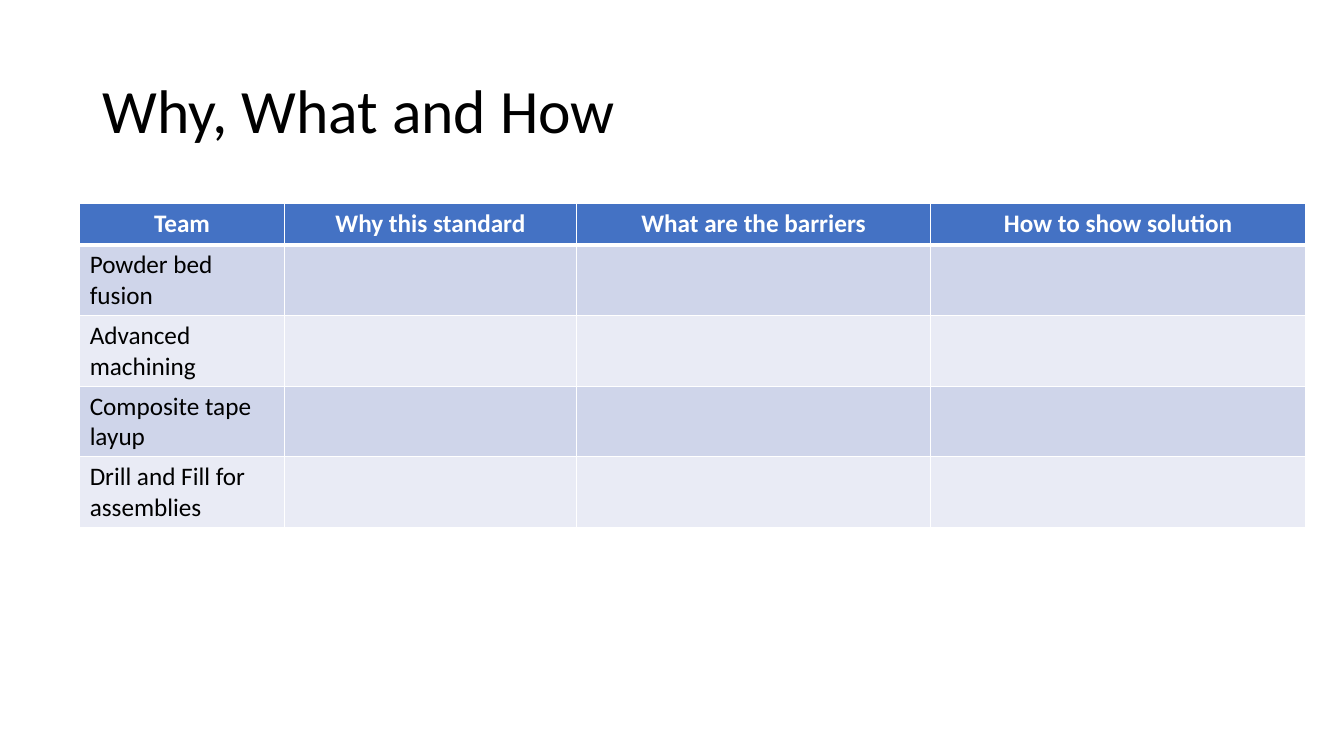
"""Build the Why, What and How slide with its team table."""
from lxml.etree import SubElement as Sub
from pptx import Presentation as Deck
from pptx.dml.color import RGBColor as Rgb
from pptx.enum.text import MSO_ANCHOR as Anchor, PP_ALIGN as Align
from pptx.oxml.ns import qn
from pptx.util import Inches as In, Pt

HUES = {"head": "4472C4", "dark": "CFD5EA", "light": "E9EBF5",
        "white": "FFFFFF", "black": "000000"}
FONT = "Calibri"
HEADS = ["Team", "Why this standard", "What are the barriers", "How to show solution"]
TEAMS = ["Powder bed fusion", "Advanced machining",
         "Composite tape layup", "Drill and Fill for assemblies"]
COLS = [2.03, 2.9, 3.51, 3.72]
ROWS = [0.41] + [0.7] * len(TEAMS)


def hue(name):
    return Rgb.from_string(HUES[name])


def style(para, size, tint, bold=False):
    font = para.font
    font.name, font.size, font.bold = FONT, Pt(size), bold
    font.color.rgb = hue(tint)


def add_title(slide, text):
    box = slide.shapes.add_textbox(In(0.92), In(0.4), In(11.5), In(1.45))
    frame = box.text_frame
    frame.word_wrap = True
    frame.vertical_anchor = Anchor.MIDDLE
    para = frame.paragraphs[0]
    para.text = text
    para.line_spacing = 0.9
    style(para, 44, "black")


def edge(cell, side, width):
    props = cell._tc.get_or_add_tcPr()
    line = Sub(props, qn(f"a:ln{side}"), w=str(Pt(width)))
    fill = Sub(line, qn("a:solidFill"))
    Sub(fill, qn("a:srgbClr"), val=HUES["white"])


def fill_cell(cell, text, tint, head):
    for side in "LRT":
        edge(cell, side, 1)
    edge(cell, "B", 3 if head else 1)
    cell.fill.solid()
    cell.fill.fore_color.rgb = hue(tint)
    para = cell.text_frame.paragraphs[0]
    para.text = text
    para.alignment = Align.CENTER if head else Align.LEFT
    style(para, 18, "white" if head else "black", head)


def add_grid(slide):
    grid = slide.shapes.add_table(len(ROWS), len(COLS), In(0.79), In(2.02),
                                  In(sum(COLS)), In(sum(ROWS))).table
    for col, width in zip(grid.columns, COLS):
        col.width = In(width)
    lines = [HEADS] + [[team] + [""] * (len(COLS) - 1) for team in TEAMS]
    for i, (row, tall, line) in enumerate(zip(grid.rows, ROWS, lines)):
        row.height = In(tall)
        tint = "head" if i == 0 else "dark" if i % 2 else "light"
        for cell, text in zip(row.cells, line):
            fill_cell(cell, text, tint, i == 0)


def main():
    deck = Deck()
    deck.slide_width, deck.slide_height = In(13.33), In(7.5)
    slide = deck.slides.add_slide(deck.slide_layouts[6])
    add_title(slide, "Why, What and How")
    add_grid(slide)
    deck.save("out.pptx")


if __name__ == "__main__":
    main()
